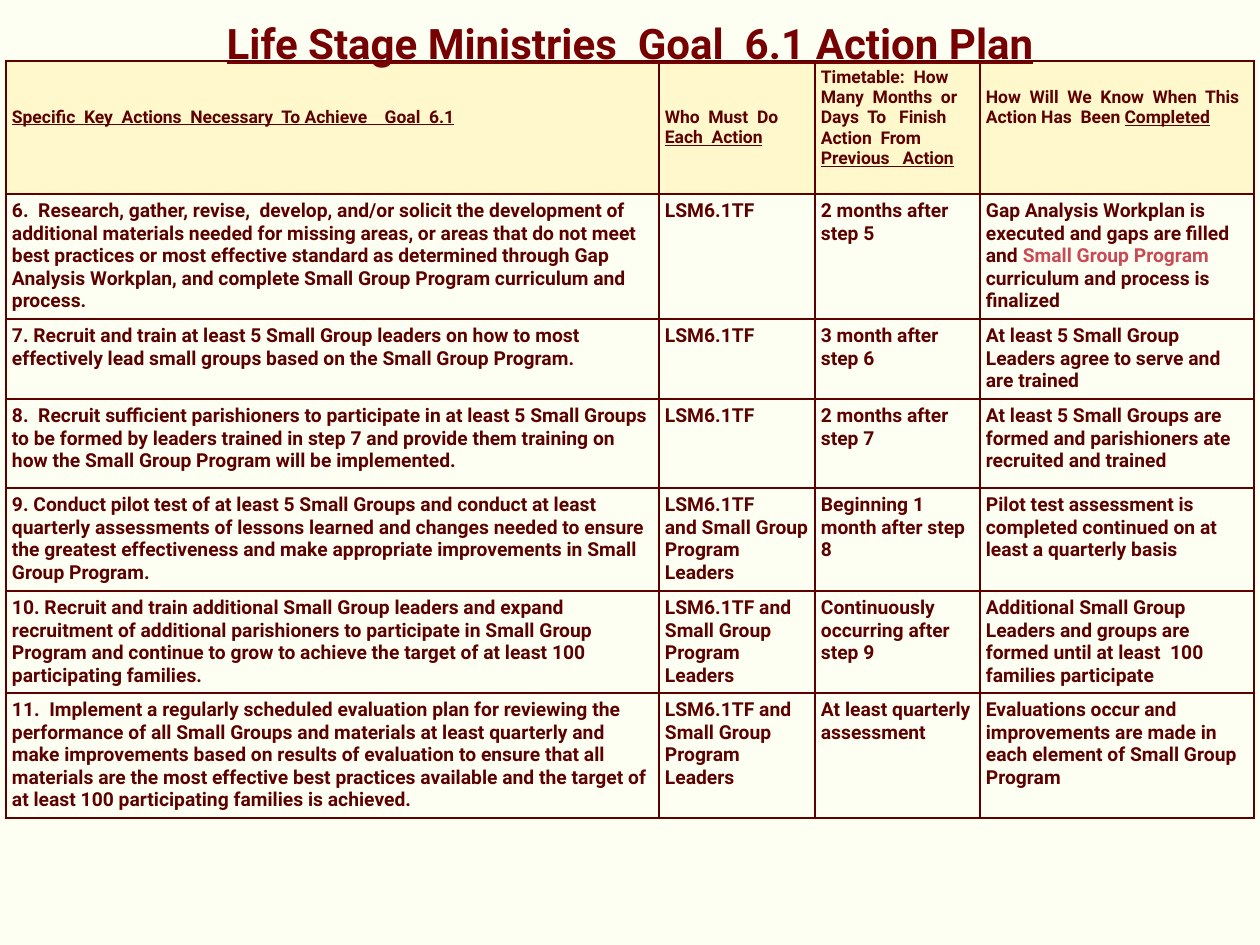
from lxml.etree import SubElement as Sub
from pptx import Presentation
from pptx.dml.color import RGBColor
from pptx.enum.text import MSO_ANCHOR as Anchor, PP_ALIGN as Align
from pptx.oxml.ns import qn
from pptx.util import Pt

CREAM = RGBColor(0xFE, 0xFF, 0xF3)
SAND = RGBColor(0xFF, 0xF8, 0xCD)
MAROON = RGBColor(0x5D, 0x01, 0x00)
RED = RGBColor(0x76, 0x00, 0x02)
ROSE = RGBColor(0xC8, 0x4A, 0x56)
FONT = "Roboto"
SCALE = 914400 / 126
PAD = 6
LINE = 20

COLS = [653, 156, 165, 274]
ROWS = [133, 125, 80, 89, 103, 102, 125]

# Each heading: lines left free above, plain text, underlined text
HEADS = [
    (2, "", "Specific  Key  Actions  Necessary  To Achieve    Goal  6.1"),
    (2, "Who  Must  Do ", "Each  Action"),
    (0, "Timetable:  How Many  Months  or Days  To   Finish  Action  From ",
     "Previous   Action"),
    (1, "How  Will  We  Know  When  This  Action Has  Been ", "Completed"),
]
TEAM = "LSM6.1TF"
GROUP = "LSM6.1TF and Small Group Program Leaders"
STEPS = [
    ("6.  Research, gather, revise,  develop, and/or solicit the development "
     "of  additional materials needed for missing areas, or areas that do not "
     "meet best practices or most effective standard as determined through "
     "Gap Analysis Workplan, and complete Small Group Program curriculum and "
     "process.",
     TEAM, "2 months after step 5",
     ["Gap Analysis Workplan is executed and gaps are filled and ",
      "Small Group Program", " curriculum and process is finalized"]),
    ("7. Recruit and train at least 5 Small Group leaders on how to most "
     "effectively lead small groups based on the Small Group Program.",
     TEAM, "3 month after step 6",
     "At least 5 Small Group Leaders agree to serve and are trained"),
    ("8.  Recruit sufficient parishioners to participate in at least 5 Small "
     "Groups to be formed by leaders trained in step 7 and provide them "
     "training on how the Small Group Program will be implemented.",
     TEAM, "2 months after step 7",
     "At least 5 Small Groups are formed and parishioners ate recruited and "
     "trained"),
    ("9. Conduct pilot test of at least 5 Small Groups and conduct at least "
     "quarterly assessments of lessons learned and changes needed to ensure "
     "the greatest effectiveness and make appropriate improvements in Small "
     "Group Program.",
     "LSM6.1TF\nand Small Group Program Leaders",
     "Beginning 1 month after step 8",
     "Pilot test assessment is completed continued on at least a quarterly "
     "basis"),
    ("10. Recruit and train additional Small Group leaders and expand "
     "recruitment of additional parishioners to participate in Small Group "
     "Program and continue to grow to achieve the target of at least 100 "
     "participating families.",
     GROUP, "Continuously occurring after  step 9",
     "Additional Small Group Leaders and groups are formed until at least  "
     "100 families participate"),
    ("11.  Implement a regularly scheduled evaluation plan for reviewing the "
     "performance of all Small Groups and materials at least quarterly and "
     "make improvements based on results of evaluation to ensure that all "
     "materials are the most effective best practices available and the "
     "target of at least 100 participating families is achieved.",
     GROUP, "At least quarterly assessment",
     "Evaluations occur and improvements are made in each element of Small "
     "Group Program"),
]


def px(n):
    return round(n * SCALE)


def style(run, size, color=MAROON, bold=True, under=False):
    font = run.font
    font.name, font.size = FONT, Pt(size)
    font.bold, font.underline = bold, under
    font.color.rgb = color


def add_run(para, text, size, **look):
    run = para.add_run()
    run.text = text
    style(run, size, **look)


def pad(box, top=PAD):
    box.margin_left = box.margin_right = box.margin_bottom = px(PAD)
    box.margin_top = px(top)


def rule(cell):
    """Draw the four borders of a cell; call it before the fill is set."""
    props = cell._tc.get_or_add_tcPr()
    for side in ("a:lnL", "a:lnR", "a:lnT", "a:lnB"):
        line = Sub(props, qn(side), w=str(Pt(1)))
        fill = Sub(line, qn("a:solidFill"))
        Sub(fill, qn("a:srgbClr"), val=str(MAROON))


def fill_head(cell, gap, plain, under):
    pad(cell, PAD + gap * LINE)
    cell.fill.solid()
    cell.fill.fore_color.rgb = SAND
    para = cell.text_frame.paragraphs[0]
    if plain:
        add_run(para, plain, 10)
    add_run(para, under, 10, under=True)


def fill_step(cell, text):
    """Write a body cell; in a list of parts, every second one is rose."""
    pad(cell)
    cell.fill.background()
    frame = cell.text_frame
    if isinstance(text, list):
        for i, part in enumerate(text):
            add_run(frame.paragraphs[0], part, 11,
                    color=ROSE if i % 2 else MAROON)
        return
    frame.text = text
    for para in frame.paragraphs:
        style(para.runs[0], 11)


def add_plan(slide, x, y):
    shape = slide.shapes.add_table(len(ROWS), len(COLS), px(x), px(y),
                                   px(sum(COLS)), px(sum(ROWS)))
    table = shape.table
    table.first_row = table.horz_banding = False
    for col, wide in zip(table.columns, COLS):
        col.width = px(wide)
    for row, high in zip(table.rows, ROWS):
        row.height = px(high)
    for cell in table.iter_cells():
        rule(cell)
    for c, head in enumerate(HEADS):
        fill_head(table.cell(0, c), *head)
    for r, step in enumerate(STEPS, 1):
        for c, text in enumerate(step):
            fill_step(table.cell(r, c), text)


def add_title(slide, x, y, w, h):
    frame = slide.shapes.add_textbox(px(x), px(y), px(w), px(h)).text_frame
    frame.word_wrap = True
    frame.vertical_anchor = Anchor.MIDDLE
    pad(frame)
    para = frame.paragraphs[0]
    para.alignment = Align.CENTER
    para.line_spacing = 0.7
    for text, bold in (("Life Stage Ministries  Goal  6.1", True),
                       (" ", False), ("Action Plan", True)):
        add_run(para, text, 24, color=RED, bold=bold, under=True)


def main():
    deck = Presentation()
    deck.slide_width, deck.slide_height = px(1260), px(945)
    slide = deck.slides.add_slide(deck.slide_layouts[6])
    back = slide.background.fill
    back.solid()
    back.fore_color.rgb = CREAM
    add_plan(slide, 6, 61)
    add_title(slide, 83, -30, 1094, 157)
    deck.save("out.pptx")


if __name__ == "__main__":
    main()
